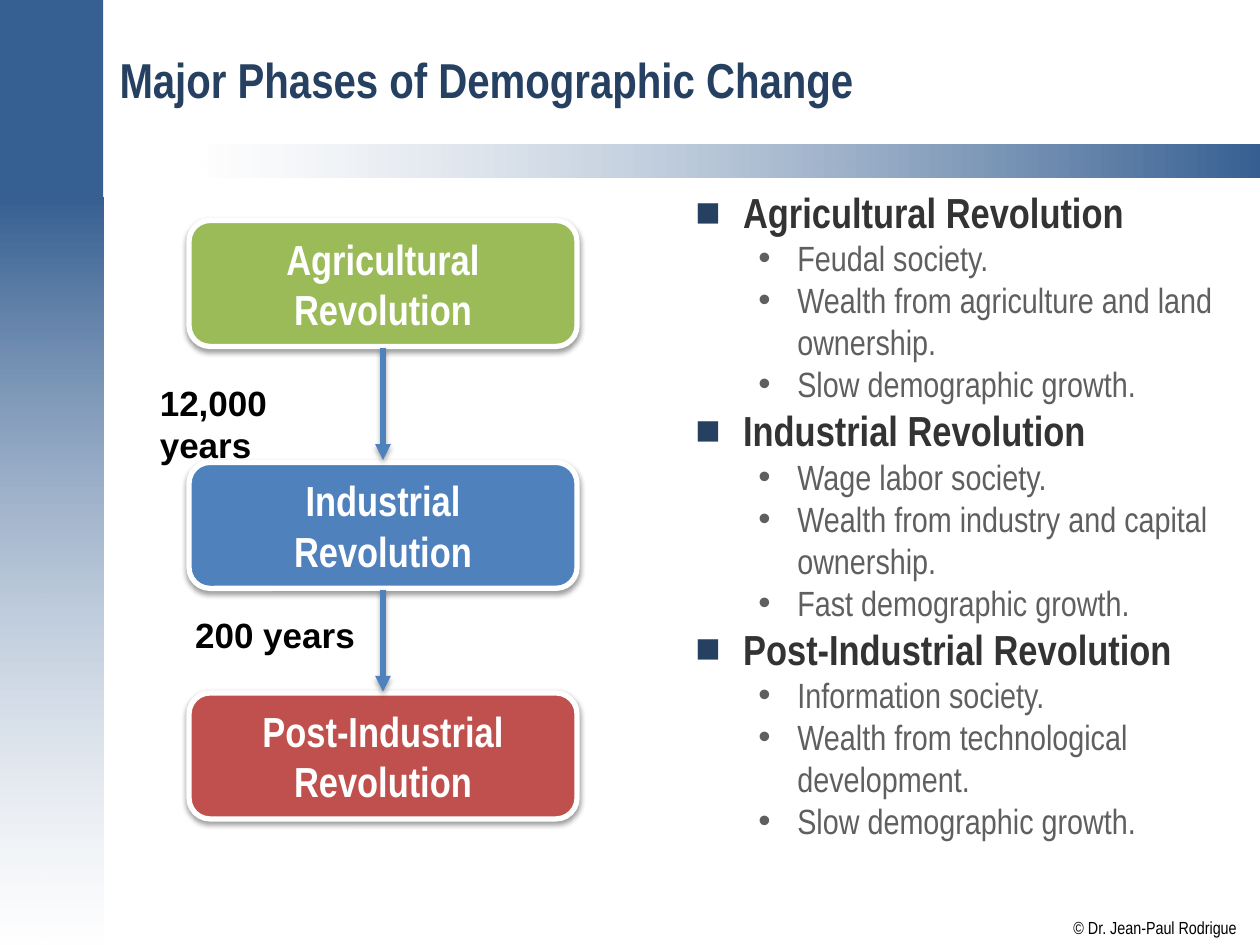
"""Build a slide on the major phases of demographic change."""
from pptx import Presentation
from pptx.dml.color import RGBColor
from pptx.enum.shapes import MSO_CONNECTOR as Connector, MSO_SHAPE as Shape
from pptx.enum.text import MSO_ANCHOR as Anchor, PP_ALIGN as Align
from pptx.oxml import parse_xml
from pptx.oxml.ns import qn
from pptx.util import Inches, Pt
from lxml.etree import SubElement

NAVY = RGBColor(0x25, 0x40, 0x61)
STEEL = RGBColor(0x37, 0x60, 0x92)
BLUE = RGBColor(0x4F, 0x81, 0xBD)
GREEN = RGBColor(0x9B, 0xBB, 0x59)
RED = RGBColor(0xC0, 0x50, 0x4D)
WHITE = RGBColor(0xFF, 0xFF, 0xFF)
BLACK = RGBColor(0, 0, 0)
DARK_GRAY = RGBColor(0x33, 0x33, 0x33)
GRAY = RGBColor(0x5F, 0x5F, 0x5F)
DRAWING = "http://schemas.openxmlformats.org/drawingml/2006/main"


def write(paragraph, text, size, color, font="Arial Narrow", bold=True, align=Align.LEFT,
          bullet=None, bullet_color=None, margin=0, hanging=0):
    paragraph.alignment = align
    if bullet:
        properties = paragraph._p.get_or_add_pPr()
        properties.set("marL", str(Inches(margin)))
        properties.set("indent", str(-Inches(hanging)))
        if bullet_color:
            SubElement(SubElement(properties, qn("a:buClr")), qn("a:srgbClr"), val=str(bullet_color))
        SubElement(properties, qn("a:buFont"), typeface="Arial")
        SubElement(properties, qn("a:buChar"), char=bullet)
    run = paragraph.add_run()
    run.text = text
    run.font.size = Pt(size)
    run.font.name = font
    run.font.bold = bold
    run.font.color.rgb = color


def add_shadow(shape, distance, opacity):
    shape._element.spPr.append(parse_xml(
        f'<a:effectLst xmlns:a="{DRAWING}"><a:outerShdw blurRad="{Pt(3.1)}" dist="{Pt(distance)}" '
        f'dir="5400000" rotWithShape="0"><a:srgbClr val="000000"><a:alpha val="{opacity * 1000}"/>'
        '</a:srgbClr></a:outerShdw></a:effectLst>'))


presentation = Presentation()
presentation.slide_width = Inches(10)
presentation.slide_height = Inches(7.5)
slide = presentation.slides.add_slide(presentation.slide_layouts[6])

bands = [
    ((-0.01, 1.57, 0.83, 5.93), (STEEL, WHITE), 270),
    ((1.57, 1.15, 8.43, 0.26), (WHITE, STEEL), 0),
    ((-0.01, -0.01, 0.83, 1.58), None, None),
]
for place, colors, angle in bands:
    band = slide.shapes.add_shape(Shape.RECTANGLE, *map(Inches, place))
    band.shadow.inherit = False
    band.line.fill.background()
    if colors is None:
        band.fill.solid()
        band.fill.fore_color.rgb = STEEL
        continue
    band.fill.gradient()
    band.fill.gradient_angle = angle
    for stop, color in zip(band.fill.gradient_stops, colors):
        stop.color.rgb = color
    for color_element in band._element.spPr.iter(qn("a:srgbClr")):
        if color_element.get("val") == str(WHITE):
            SubElement(color_element, qn("a:alpha"), val="50000")

credit = slide.shapes.add_textbox(Inches(8.52), Inches(7.28), Inches(1.3), Inches(0.17)).text_frame
credit.margin_left = credit.margin_right = credit.margin_top = credit.margin_bottom = 0
credit.word_wrap = False
write(credit.paragraphs[0], "© Dr. Jean-Paul Rodrigue", 10, BLACK, bold=False)

title = slide.shapes.add_textbox(Inches(0.85), Inches(0.11), Inches(8.98), Inches(1.04)).text_frame
title.word_wrap = True
title.vertical_anchor = Anchor.MIDDLE
write(title.paragraphs[0], "Major Phases of Demographic Change", 28, NAVY)

phases = [
    ("Agricultural", GREEN, 1.75,
     ["Feudal society.", "Wealth from agriculture and land ownership.", "Slow demographic growth."]),
    ("Industrial", BLUE, 3.67,
     ["Wage labor society.", "Wealth from industry and capital ownership.", "Fast demographic growth."]),
    ("Post-Industrial", RED, 5.5,
     ["Information society.", "Wealth from technological development.", "Slow demographic growth."]),
]
body = slide.shapes.add_textbox(Inches(5.42), Inches(1.43), Inches(4.43), Inches(5.79)).text_frame
body.word_wrap = True
paragraph = body.paragraphs[0]
for name, color, top, points in phases:
    if paragraph is None:
        paragraph = body.add_paragraph()
    write(paragraph, f"{name} Revolution", 24, DARK_GRAY,
          bullet="■", bullet_color=NAVY, margin=0.38, hanging=0.38)
    paragraph = None
    for point in points:
        point_paragraph = body.add_paragraph()
        point_paragraph.level = 1
        write(point_paragraph, point, 20, GRAY, bold=False, bullet="•", margin=0.81, hanging=0.31)

    box = slide.shapes.add_shape(Shape.ROUNDED_RECTANGLE, Inches(1.5), Inches(top), Inches(3.08), Inches(1))
    box.fill.solid()
    box.fill.fore_color.rgb = color
    box.line.color.rgb = WHITE
    box.line.width = Pt(3)
    add_shadow(box, 1.6, 38)
    box.text_frame.word_wrap = False
    box.text_frame.vertical_anchor = Anchor.MIDDLE
    write(box.text_frame.paragraphs[0], name, 24, WHITE, align=Align.CENTER)
    write(box.text_frame.add_paragraph(), "Revolution", 24, WHITE, align=Align.CENTER)

for start, end in [(2.76, 3.65), (4.68, 5.49)]:
    arrow = slide.shapes.add_connector(Connector.STRAIGHT, Inches(3.04), Inches(start), Inches(3.04), Inches(end))
    arrow.line.color.rgb = BLUE
    arrow.line.width = Pt(3)
    SubElement(arrow.line._get_or_add_ln(), qn("a:tailEnd"), type="triangle")
    add_shadow(arrow, 1.8, 35)

for text, left, top, width in [("12,000 years", 1.17, 2.98, 1.84), ("200 years", 1.45, 4.82, 1.48)]:
    label = slide.shapes.add_textbox(Inches(left), Inches(top), Inches(width), Inches(0.43)).text_frame
    label.word_wrap = True
    write(label.paragraphs[0], text, 20, BLACK, font="Arial")

presentation.save("out.pptx")
